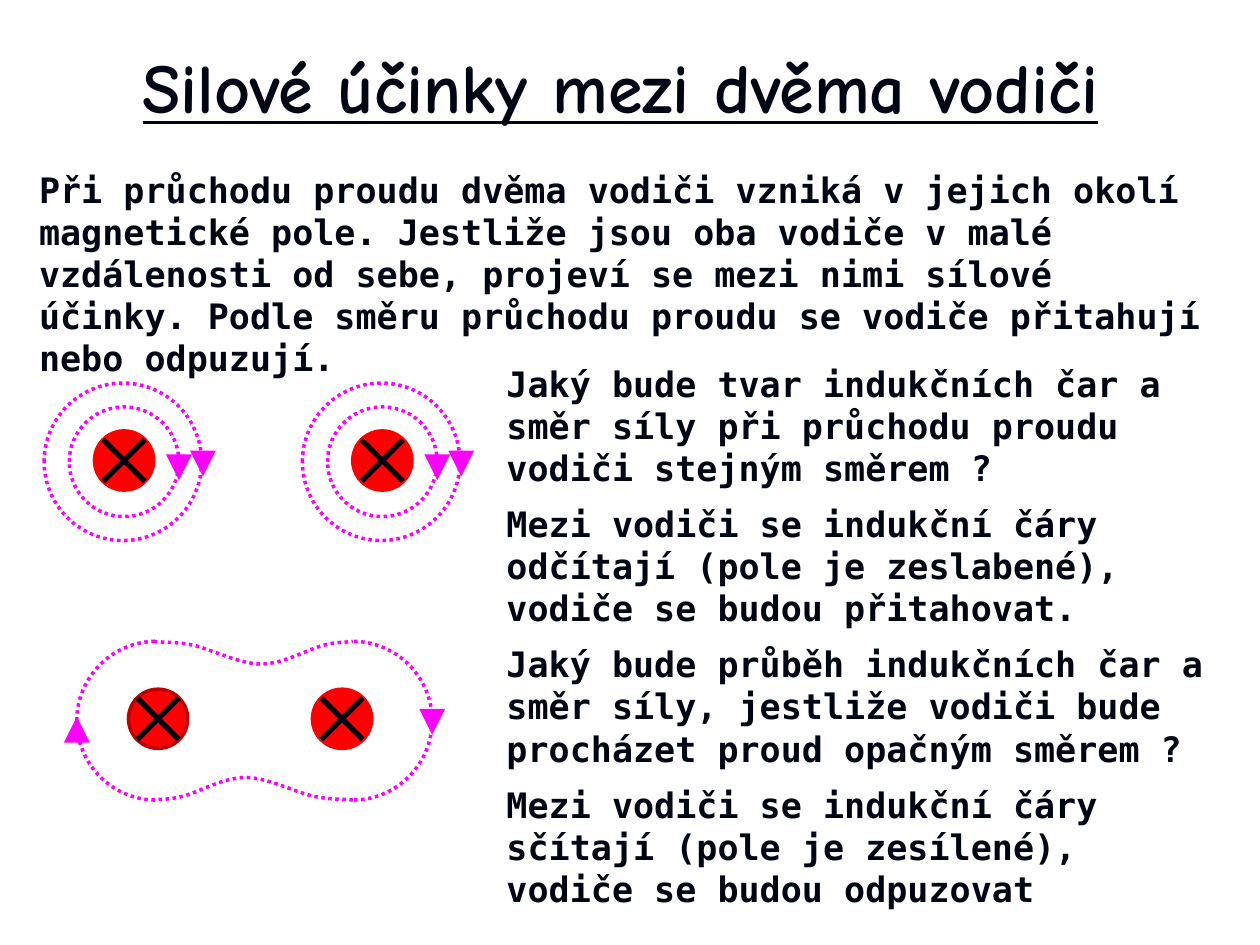
from lxml.etree import SubElement
from pptx import Presentation
from pptx.dml.color import RGBColor
from pptx.enum.dml import MSO_LINE
from pptx.enum.shapes import MSO_CONNECTOR, MSO_SHAPE
from pptx.enum.text import MSO_ANCHOR, MSO_AUTO_SIZE, PP_ALIGN
from pptx.oxml.ns import qn
from pptx.util import Inches, Pt

COLORS = {"ink": "000514", "wire": "FF0000", "wire_rim": "C00000", "field": "FF00FF"}
TITLE_FONT, BODY_FONT = "Comic Neue", "DejaVu Sans Mono"
WIRE_SIZE, MARKER_SIZE = 0.47, 0.16

TITLE = "Silové účinky mezi dvěma vodiči"
INTRO = ["Při průchodu proudu dvěma vodiči vzniká v jejich okolí magnetické pole. "
         "Jestliže jsou oba vodiče v malé vzdálenosti od sebe, projeví se mezi nimi "
         "sílové účinky. Podle směru průchodu proudu se vodiče přitahují nebo odpuzují."]
QUESTIONS = [
    "Jaký bude tvar indukčních čar a směr síly při průchodu proudu vodiči stejným směrem ?",
    "Mezi vodiči se indukční čáry odčítají (pole je zeslabené), vodiče se budou přitahovat.",
    "Jaký bude průběh indukčních čar a směr síly, jestliže vodiči bude procházet proud "
    "opačným směrem ?",
    "Mezi vodiči se indukční čáry sčítají (pole je zesílené), vodiče se budou odpuzovat",
]

# Dip of the shared field line: start, then two handles and an end per Bézier segment
DIP = [(1.22, 5.09),
       (1.27, 5.10), (1.39, 5.09), (1.53, 5.12),
       (1.67, 5.15), (1.90, 5.27), (2.07, 5.27),
       (2.25, 5.27), (2.45, 5.15), (2.57, 5.12),
       (2.69, 5.09), (2.75, 5.10), (2.80, 5.09)]


def color(name):
    return RGBColor.from_string(COLORS[name])


def style(shape, fill, line, dotted=False):
    shape.shadow.inherit = False
    if fill:
        shape.fill.solid()
        shape.fill.fore_color.rgb = color(fill)
    else:
        shape.fill.background()
    shape.line.color.rgb = color(line)
    shape.line.width = Pt(2)
    if dotted:
        shape.line.dash_style = MSO_LINE.ROUND_DOT


def add_text(page, at, texts, font, size, inset=0.04):
    box = page.shapes.add_textbox(*map(Inches, at))
    frame = box.text_frame
    frame.word_wrap = True
    frame.margin_left = frame.margin_right = Inches(inset)
    frame.margin_top, frame.margin_bottom = Inches(0.03), Inches(0.04)
    for index, text in enumerate(texts):
        para = frame.add_paragraph() if index else frame.paragraphs[0]
        para.text = text
        para.space_before = Pt(8 if index else 0)
        para.font.name, para.font.size, para.font.bold = font, Pt(size), True
        para.font.color.rgb = color("ink")
    return frame


def add_circle(group, left, top, size, fill, line, dotted=False):
    circle = group.shapes.add_shape(MSO_SHAPE.OVAL, *map(Inches, (left, top, size, size)))
    style(circle, fill, line, dotted)


def add_wire(group, left, top, rim="wire"):
    """Wire seen end-on, with a cross for current flowing away."""
    add_circle(group, left, top, WIRE_SIZE, "wire", rim)
    near, far = 0.07, 0.40
    for start, end in ((near, far), (far, near)):
        stroke = group.shapes.add_connector(
            MSO_CONNECTOR.STRAIGHT, Inches(left + start), Inches(top + near),
            Inches(left + end), Inches(top + far))
        stroke.line.color.rgb = color("ink")
        stroke.line.width = Pt(3)
        SubElement(stroke.element.spPr, qn("a:effectLst"))


def add_marker(group, left, top, rotation=180):
    marker = group.shapes.add_shape(MSO_SHAPE.ISOSCELES_TRIANGLE, Inches(left), Inches(top),
                                    Inches(MARKER_SIZE), Inches(MARKER_SIZE))
    marker.rotation = rotation
    style(marker, "field", "field")
    SubElement(marker.line._get_or_add_ln(), qn("a:miter"), lim="800000")


def add_curve(group, points):
    """Open Bézier curve; every three points after the first make one segment."""
    points = [(Inches(x), Inches(y)) for x, y in points]
    builder = group.shapes.build_freeform(*points[0])
    builder.add_line_segments(points[1:], close=False)
    curve = builder.convert_to_shape()
    outline = next(curve.element.iter(qn("a:path")))
    lines = outline.findall(qn("a:lnTo"))
    for index in range(0, len(lines), 3):
        segment = SubElement(outline, qn("a:cubicBezTo"))
        for line in lines[index:index + 3]:
            segment.append(line[0])
            outline.remove(line)
    style(curve, None, "field", dotted=True)


def quarter_arc(x, y, dx, dy):
    """From the side of a circle to its top or bottom."""
    bend = 0.55
    return [(x + dx, y), (x + dx, y + bend * dy), (x + bend * dx, y + dy), (x, y + dy)]


def add_separate_field(page, left, top):
    """One wire with its two circular field lines."""
    group = page.shapes.add_group_shape()
    add_wire(group, left + 0.40, top + 0.38)
    add_circle(group, left + 0.20, top + 0.19, 0.87, None, "field", dotted=True)
    add_marker(group, left + 0.99, top + 0.58)
    add_circle(group, left, top, 1.25, None, "field", dotted=True)
    add_marker(group, left + 1.18, top + 0.55)


def add_shared_field(page):
    """Two wires inside one common field line."""
    group = page.shapes.add_group_shape()
    left, right, middle, radius = 1.24, 2.80, 5.72, 0.63
    add_wire(group, 1.02, 5.47, rim="wire_rim")
    add_marker(group, 3.35, 5.64)
    add_wire(group, 2.48, 5.47)
    add_marker(group, 0.53, 5.72, rotation=0)
    for x, dx in ((left, -radius), (right, radius)):
        for dy in (-radius, radius):
            add_curve(group, quarter_arc(x, middle, dx, dy))
    # The lower dip is the upper one turned by 180 degrees
    add_curve(group, DIP)
    add_curve(group, [(4.02 - x, 2 * middle - y) for x, y in DIP])


def main():
    deck = Presentation()
    deck.slide_width, deck.slide_height = Inches(10), Inches(7.5)
    page = deck.slides.add_slide(deck.slide_layouts[6])

    # Title
    title = add_text(page, (0.2, 0.21, 9.45, 0.95), [TITLE], TITLE_FONT, 40, inset=0.1)
    title.vertical_anchor = MSO_ANCHOR.MIDDLE
    title.paragraphs[0].alignment = PP_ALIGN.CENTER
    title.paragraphs[0].font.underline = True

    # Explanation, then questions with answers
    for at, texts in (((0.27, 1.31, 9.37, 1.41), INTRO), ((3.98, 2.85, 5.67, 3.51), QUESTIONS)):
        add_text(page, at, texts, BODY_FONT, 20).auto_size = MSO_AUTO_SIZE.SHAPE_TO_FIT_TEXT

    # Field diagrams
    for left in (0.35, 2.40):
        add_separate_field(page, left, 3.04)
    add_shared_field(page)

    deck.save("out.pptx")


if __name__ == "__main__":
    main()
